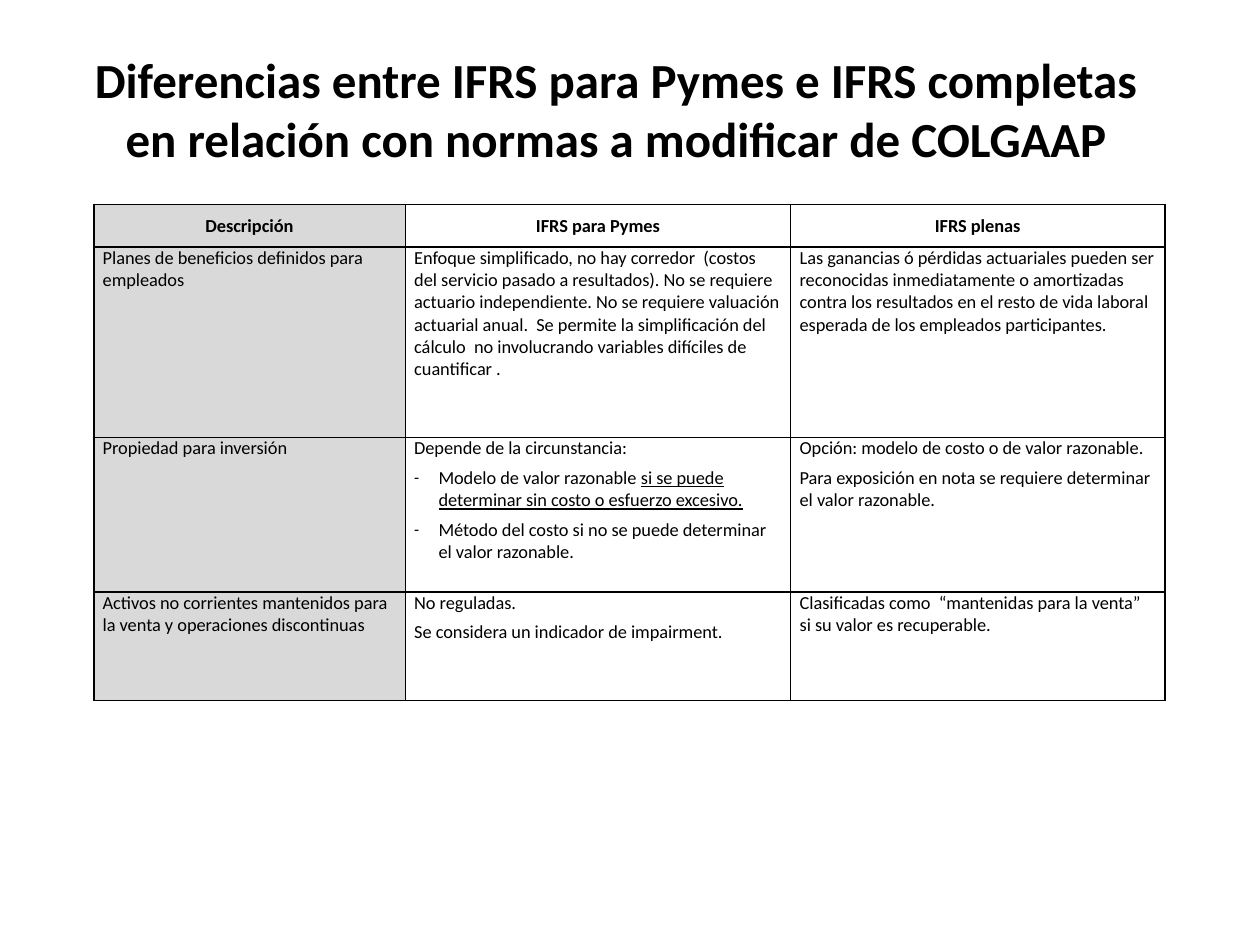
from dataclasses import dataclass

from lxml.etree import SubElement
from pptx import Presentation
from pptx.dml.color import RGBColor
from pptx.enum.text import MSO_ANCHOR, PP_ALIGN
from pptx.oxml.ns import qn
from pptx.util import Cm, Pt


@dataclass(frozen=True)
class Theme:
    font: str = "Calibri"
    ink: RGBColor = RGBColor(0, 0, 0)
    title_fill: RGBColor = RGBColor(0xFF, 0xFF, 0xFF)
    label_fill: RGBColor = RGBColor(0xD9, 0xD9, 0xD9)
    title_size: Pt = Pt(28)
    body_size: Pt = Pt(10.5)
    paragraph_gap: Pt = Pt(2.1)
    border: Pt = Pt(1)


THEME = Theme()
DASH = "- "
UNDERLINE = "_"

COLUMN_WIDTHS = [6.28, 7.77, 7.54]
ROW_HEIGHTS = [0.86, 3.84, 3.11, 2.19]

# Each cell is a list of paragraphs; "- " starts a dash item, "_" toggles underlining.
COMPARISON = [
    [["Descripción"], ["IFRS para Pymes"], ["IFRS plenas"]],
    [
        ["Planes de beneficios definidos para empleados"],
        ["Enfoque simplificado, no hay corredor  (costos del servicio pasado a "
         "resultados). No se requiere actuario independiente. No se requiere "
         "valuación actuarial anual.  Se permite la simplificación del cálculo  "
         "no involucrando variables difíciles de cuantificar ."],
        ["Las ganancias ó pérdidas actuariales pueden ser reconocidas "
         "inmediatamente o amortizadas contra los resultados en el resto de vida "
         "laboral esperada de los empleados participantes."],
    ],
    [
        ["Propiedad para inversión"],
        ["Depende de la circunstancia:",
         "- Modelo de valor razonable _si se puede determinar sin costo o "
         "esfuerzo excesivo._",
         "- Método del costo si no se puede determinar el valor razonable."],
        ["Opción: modelo de costo o de valor razonable.",
         "Para exposición en nota se requiere determinar el valor razonable."],
    ],
    [
        ["Activos no corrientes mantenidos para la venta y operaciones discontinuas"],
        ["No reguladas.", "Se considera un indicador de impairment."],
        ["Clasificadas como  “mantenidas para la venta”  si su valor es recuperable."],
    ],
]


def style_font(paragraph, size, bold):
    font = paragraph.font
    font.name, font.size, font.bold = THEME.font, size, bold
    font.color.rgb = THEME.ink


def draw_borders(cell):
    properties = cell._tc.get_or_add_tcPr()
    for side in ("a:lnL", "a:lnR", "a:lnT", "a:lnB"):
        line = SubElement(properties, qn(side), w=str(THEME.border))
        fill = SubElement(line, qn("a:solidFill"))
        SubElement(fill, qn("a:srgbClr"), val=str(THEME.ink))


deck = Presentation()
deck.slide_width, deck.slide_height = Cm(25.4), Cm(19.05)
slide = deck.slides.add_slide(deck.slide_layouts[6])

# Title
title_box = slide.shapes.add_textbox(Cm(0.3), Cm(0.92), Cm(24.23), Cm(2.54))
title_box.fill.solid()
title_box.fill.fore_color.rgb = THEME.title_fill
title = title_box.text_frame
title.word_wrap = True
title.vertical_anchor = MSO_ANCHOR.MIDDLE
heading = title.paragraphs[0]
heading.text = ("Diferencias entre IFRS para Pymes e IFRS completas\v"
                "en relación con normas a modificar de COLGAAP")
heading.alignment = PP_ALIGN.CENTER
style_font(heading, THEME.title_size, True)

# Comparison table
table = slide.shapes.add_table(
    len(ROW_HEIGHTS), len(COLUMN_WIDTHS), Cm(1.89), Cm(4.12),
    Cm(sum(COLUMN_WIDTHS)), Cm(sum(ROW_HEIGHTS))).table
table.first_row = table.horz_banding = False
for column, width in zip(table.columns, COLUMN_WIDTHS):
    column.width = Cm(width)
for row, height in zip(table.rows, ROW_HEIGHTS):
    row.height = Cm(height)

for row_index, row_content in enumerate(COMPARISON):
    is_header = row_index == 0
    for column_index, statements in enumerate(row_content):
        cell = table.cell(row_index, column_index)
        cell.margin_left = cell.margin_right = Cm(0.18)
        cell.margin_top = cell.margin_bottom = Cm(0)
        cell.vertical_anchor = MSO_ANCHOR.MIDDLE if is_header else MSO_ANCHOR.TOP
        draw_borders(cell)
        if column_index == 0:
            cell.fill.solid()
            cell.fill.fore_color.rgb = THEME.label_fill
        else:
            cell.fill.background()

        for index, statement in enumerate(statements):
            frame = cell.text_frame
            paragraph = frame.add_paragraph() if index else frame.paragraphs[0]
            paragraph.alignment = PP_ALIGN.CENTER if is_header else PP_ALIGN.LEFT
            if index:
                paragraph.space_before = THEME.paragraph_gap
            if index < len(statements) - 1:
                paragraph.space_after = THEME.paragraph_gap
            if statement.startswith(DASH):
                properties = paragraph._p.get_or_add_pPr()
                properties.set("marL", str(Cm(0.49)))
                properties.set("indent", str(-Cm(0.49)))
                SubElement(properties, qn("a:buSzPct"), val="90000")
                SubElement(properties, qn("a:buFont"), typeface=THEME.font)
                SubElement(properties, qn("a:buChar"), char="-")
            style_font(paragraph, THEME.body_size, is_header)
            for part, words in enumerate(statement.removeprefix(DASH).split(UNDERLINE)):
                if words:
                    run = paragraph.add_run()
                    run.text = words
                    if part % 2:
                        run.font.underline = True

deck.save("out.pptx")
